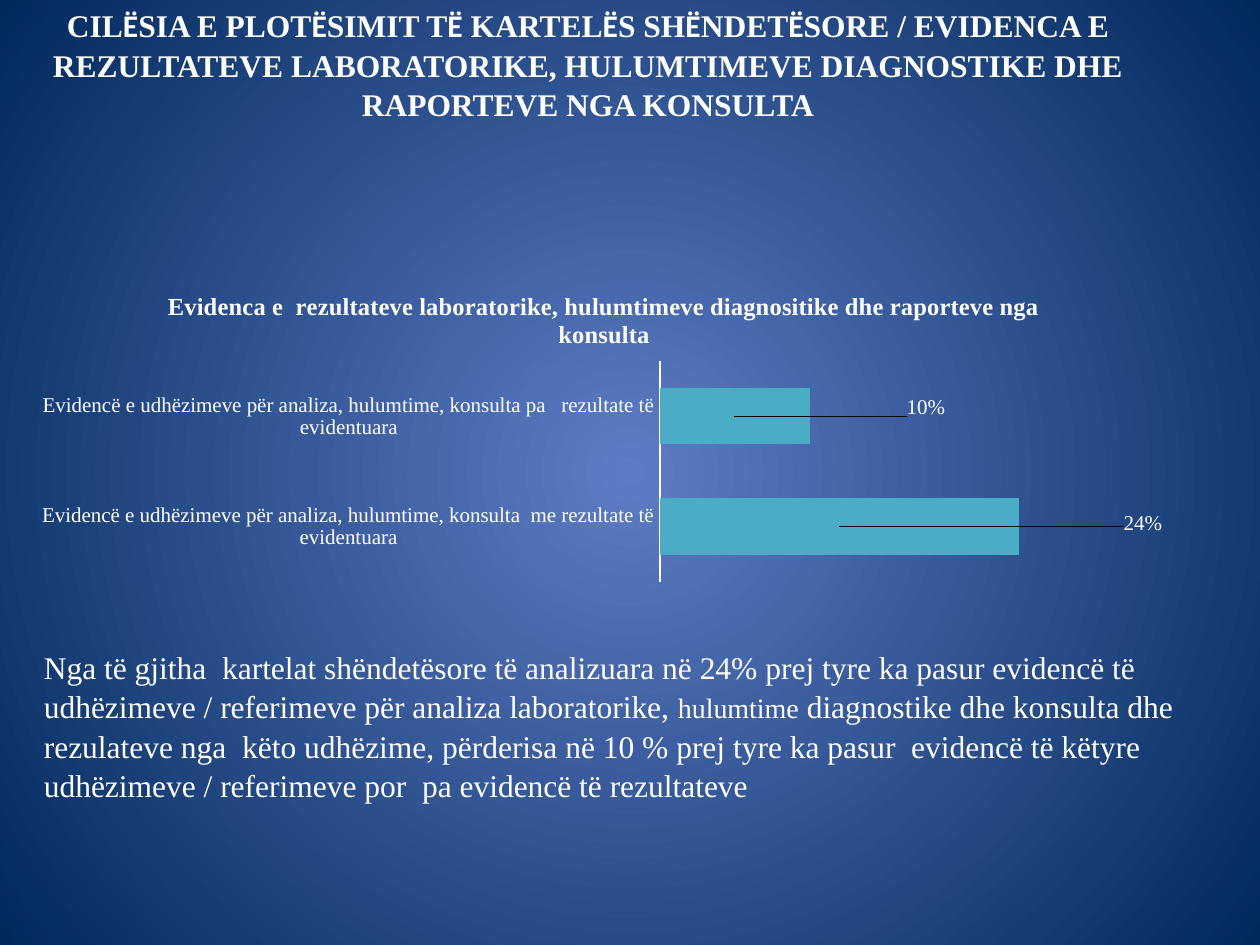
from dataclasses import dataclass
from itertools import groupby

from lxml.etree import SubElement
from pptx import Presentation
from pptx.chart.data import CategoryChartData as Data
from pptx.dml.color import RGBColor as Rgb
from pptx.enum.chart import XL_CHART_TYPE as Kind, XL_TICK_MARK as Tick
from pptx.enum.text import MSO_ANCHOR as Anchor, MSO_AUTO_SIZE as Fit, PP_ALIGN as Align
from pptx.oxml import parse_xml
from pptx.oxml.ns import nsdecls, qn
from pptx.util import Pt


@dataclass(frozen=True)
class Theme:
    ink: Rgb = Rgb(0xFF, 0xFF, 0xFF)
    glow: Rgb = Rgb(0x5E, 0x7C, 0xC5)
    deep: Rgb = Rgb(0x00, 0x29, 0x5C)
    bar: Rgb = Rgb(0x4B, 0xAC, 0xC6)
    serif: str = "Times New Roman"
    sans: str = "Calibri"
    main: int = 18
    minor: int = 16
    head: int = 14
    label: int = 12
    pitch: float = 1.04


THEME = Theme()

TITLE = (
    "CILËSIA E PLOTËSIMIT TË KARTELËS SHËNDETËSORE / EVIDENCA E REZULTATEVE "
    "LABORATORIKE, HULUMTIMEVE DIAGNOSTIKE DHE RAPORTEVE NGA KONSULTA"
)
HEAD = (
    "Evidenca e  rezultateve laboratorike, hulumtimeve diagnositike "
    "dhe raporteve nga konsulta"
)
CASES = [
    ("Evidencë e udhëzimeve për analiza, hulumtime, konsulta  me rezultate të evidentuara", 0.24),
    ("Evidencë e udhëzimeve për analiza, hulumtime, konsulta pa   rezultate të evidentuara", 0.1),
]
SHIFTS = [(0.27, -0.01), (0.17, -0.03)]
PLOT = {"x": 0.55, "y": 0.28, "w": 0.4, "h": 0.7}
NOTE = [
    (
        "Nga të gjitha  kartelat shëndetësore të analizuara në 24% prej tyre ka pasur "
        "evidencë të udhëzimeve / referimeve për analiza laboratorike, ",
        THEME.main,
    ),
    ("hulumtime", THEME.minor),
    (
        " diagnostike dhe konsulta dhe rezulateve nga  këto udhëzime, përderisa në 10 % "
        "prej tyre ka pasur  evidencë të këtyre udhëzimeve / referimeve por  pa evidencë "
        "të rezultateve",
        THEME.main,
    ),
]


def style(font, size, bold=False, name=THEME.serif):
    font.name = name
    font.size = Pt(size)
    font.bold = bold
    font.color.rgb = THEME.ink


def add_run(para, text, size, bold=False, name=THEME.serif):
    run = para.add_run()
    run.text = text
    style(run.font, size, bold, name)


def place(shape, box):
    shape.left, shape.top, shape.width, shape.height = map(Pt, box)


def paint_back(slide):
    fill = slide.background.fill
    fill.gradient()
    for stop, tone in zip(fill.gradient_stops, (THEME.glow, THEME.deep)):
        stop.color.rgb = tone
    line = slide.element.find(".//" + qn("a:lin"))
    ring = parse_xml(
        f'<a:path {nsdecls("a")} path="circle">'
        '<a:fillToRect l="50000" t="50000" r="50000" b="50000"/></a:path>'
    )
    line.getparent().replace(line, ring)


def put_title(slide, box):
    shape = slide.shapes.title
    place(shape, box)
    frame = shape.text_frame
    frame.word_wrap = True
    frame.auto_size = Fit.SHAPE_TO_FIT_TEXT
    frame.vertical_anchor = Anchor.MIDDLE
    para = frame.paragraphs[0]
    para.alignment = Align.CENTER
    para.line_spacing = THEME.pitch
    for mark, part in groupby(TITLE, lambda sign: sign == "Ë"):
        add_run(para, "".join(part), THEME.main, True, THEME.sans if mark else THEME.serif)


def set_layout(node, **marks):
    layout = SubElement(node, qn("c:manualLayout"))
    for tag, value in marks.items():
        SubElement(layout, qn("c:" + tag)).set("val", str(value))


def put_chart(slide, box):
    data = Data(number_format="0%")
    data.categories = [name for name, _ in CASES]
    data.add_series("Series 1", [value for _, value in CASES])
    chart = slide.shapes.add_chart(Kind.BAR_STACKED, *map(Pt, box), data).chart
    style(chart.font, THEME.label)
    chart.has_legend = False
    chart.has_title = True
    frame = chart.chart_title.text_frame
    frame.text = HEAD
    style(frame.paragraphs[0].runs[0].font, THEME.head, True)
    chart.chart_title.include_in_layout = False

    rows = chart.category_axis
    rows.major_tick_mark = Tick.NONE
    rows.format.line.color.rgb = THEME.ink
    scale = chart.value_axis
    scale.minimum_scale, scale.maximum_scale = 0, 0.3
    scale.has_major_gridlines = False
    scale.visible = False

    plot = chart.plots[0]
    plot.gap_width, plot.overlap = 95, 100
    plot.vary_by_categories = False
    bars = plot.series[0]
    bars.format.fill.solid()
    bars.format.fill.fore_color.rgb = THEME.bar
    tags = bars.data_labels
    tags.show_value = True
    tags.number_format = "0%"
    tags.number_format_is_linked = False
    style(tags.font, THEME.label)
    for index in range(len(CASES)):
        style(bars.points[index].data_label.font, THEME.label)

    root = chart.element
    for node, (dx, dy) in zip(root.iter(qn("c:dLbl")), SHIFTS):
        layout = parse_xml(f'<c:layout {nsdecls("c")}/>')
        set_layout(layout, x=dx, y=dy)
        node.insert(1, layout)
    area = root.find(".//" + qn("c:plotArea"))
    layout = area.find(qn("c:layout"))
    if layout is None:
        layout = parse_xml(f'<c:layout {nsdecls("c")}/>')
        area.insert(0, layout)
    set_layout(layout, layoutTarget="inner", xMode="edge", yMode="edge", **PLOT)


def put_note(slide, box):
    frame = slide.shapes.add_textbox(*map(Pt, box)).text_frame
    frame.word_wrap = True
    frame.auto_size = Fit.SHAPE_TO_FIT_TEXT
    para = frame.paragraphs[0]
    para.line_spacing = THEME.pitch
    for text, size in NOTE:
        add_run(para, text, size)


def main():
    deck = Presentation()
    deck.slide_width, deck.slide_height = Pt(720), Pt(540)
    slide = deck.slides.add_slide(deck.slide_layouts[5])
    paint_back(slide)
    put_title(slide, (0, 0, 672, 73))
    put_chart(slide, (24, 156, 642, 180))
    put_note(slide, (18, 366, 720, 94))
    deck.save("out.pptx")


if __name__ == "__main__":
    main()
